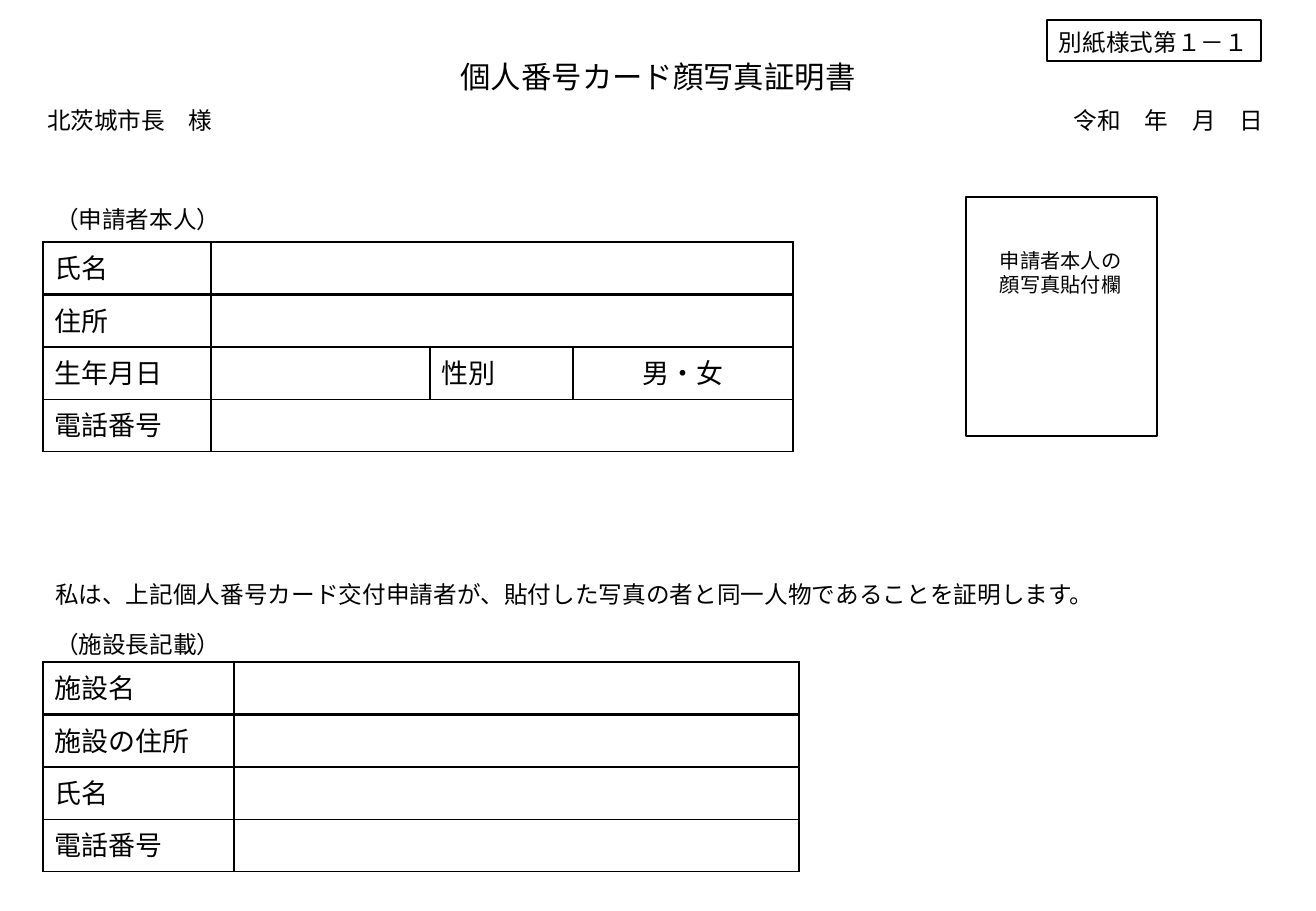
from lxml.etree import SubElement
from pptx import Presentation
from pptx.dml.color import RGBColor as RGB
from pptx.enum.shapes import MSO_SHAPE as SHAPE
from pptx.enum.text import MSO_ANCHOR as ANCHOR, PP_ALIGN as ALIGN
from pptx.oxml.ns import qn
from pptx.util import Pt

SCALE = 7526
COLORS = {"ink": "000000", "paper": "FFFFFF"}
FONT = "Noto Sans CJK JP"


def px(n):
    return n * SCALE


def write(tf, text, size=14, align=ALIGN.LEFT, pad=(12, 8, 12, 4), wrap=True):
    tf.word_wrap = wrap
    tf.margin_left, tf.margin_top, tf.margin_right, tf.margin_bottom = map(px, pad)
    tf.vertical_anchor = ANCHOR.TOP
    for i, line in enumerate(text.split("\n")):
        p = tf.paragraphs[0] if i == 0 else tf.add_paragraph()
        p.alignment = align
        p.line_spacing = Pt(round(size * 1.2, 1))
        r = p.add_run()
        r.text = line
        r.font.size = Pt(size)
        r.font.name = FONT
        r.font.color.rgb = RGB.from_string(COLORS["ink"])
        SubElement(r.font._element, qn("a:ea"), typeface=FONT)


class Form:
    def __init__(self, prs):
        self.s = prs.slides.add_slide(prs.slide_layouts[6])

    def label(self, x, y, w, h, text, **fmt):
        sp = self.s.shapes.add_textbox(*map(px, (x, y, w, h)))
        write(sp.text_frame, text, **fmt)

    def frame(self, x, y, w, h, width=1, text=None, **fmt):
        sp = self.s.shapes.add_shape(SHAPE.RECTANGLE, *map(px, (x, y, w, h)))
        sp.shadow.inherit = False
        sp.fill.background()
        sp.line.color.rgb = RGB.from_string(COLORS["ink"])
        sp.line.width = Pt(width)
        if text:
            write(sp.text_frame, text, **fmt)

    def border(self, cell, widths):
        tcPr = cell._tc.get_or_add_tcPr()
        for side, width in widths.items():
            ln = SubElement(tcPr, qn("a:ln" + side), w=str(Pt(width)))
            fill = SubElement(ln, qn("a:solidFill"))
            SubElement(fill, qn("a:srgbClr"), val=COLORS["ink"])

    def table(self, x, y, cols, h, rows, merged=()):
        gf = self.s.shapes.add_table(len(rows), len(cols), *map(px, (x, y, sum(cols), h)))
        tbl = gf.table
        tbl.first_row = tbl.horz_banding = False
        for col, w in zip(tbl.columns, cols):
            col.width = px(w)
        for i, texts in enumerate(rows):
            tbl.rows[i].height = px(h) // len(rows)
            for j, text in enumerate(texts):
                cell = tbl.cell(i, j)
                self.border(cell, {"L": 1, "R": 1, "T": 2 if i == 1 else 1, "B": 2 if i == 0 else 1})
                cell.fill.solid()
                cell.fill.fore_color.rgb = RGB.from_string(COLORS["paper"])
                cell.margin_left = cell.margin_right = px(12)
                cell.margin_top, cell.margin_bottom = px(12), px(4)
                align = ALIGN.CENTER if j == 3 else ALIGN.LEFT
                write(cell.text_frame, text, size=16, align=align)
        for i in merged:
            tbl.cell(i, 1).merge(tbl.cell(i, len(cols) - 1))


def main():
    prs = Presentation()
    prs.slide_width, prs.slide_height = px(1316), px(911)
    form = Form(prs)
    form.label(443, 50, 430, 49, "個人番号カード顔写真証明書", size=18, align=ALIGN.CENTER)
    form.label(35, 98, 430, 41, "北茨城市長　様")
    form.table(43, 242, [168, 219, 143, 220], 197, [
        ["氏名", "", "", ""],
        ["住所", "", "", ""],
        ["生年月日", "", "性別", "男・女"],
        ["電話番号", "", "", ""],
    ], merged=(0, 1, 3))
    form.frame(966, 197, 191, 239)
    form.label(988, 242, 148, 61, "申請者本人の\n顔写真貼付欄", size=12, pad=(12, 6, 12, 6))
    form.label(43, 572, 1101, 69, "私は、上記個人番号カード交付申請者が、貼付した写真の者と同一人物であることを証明します。")
    form.label(43, 197, 750, 41, "（申請者本人）")
    form.table(43, 662, [191, 565], 197,
               [[name, ""] for name in ("施設名", "施設の住所", "氏名", "電話番号")])
    form.label(43, 622, 750, 41, "（施設長記載）")
    form.label(1062, 98, 232, 41, "令和　年　月　日")
    form.frame(1047, 20, 214, 41, width=0.75, text="別紙様式第１－１", wrap=False)
    prs.save("out.pptx")


if __name__ == "__main__":
    main()
